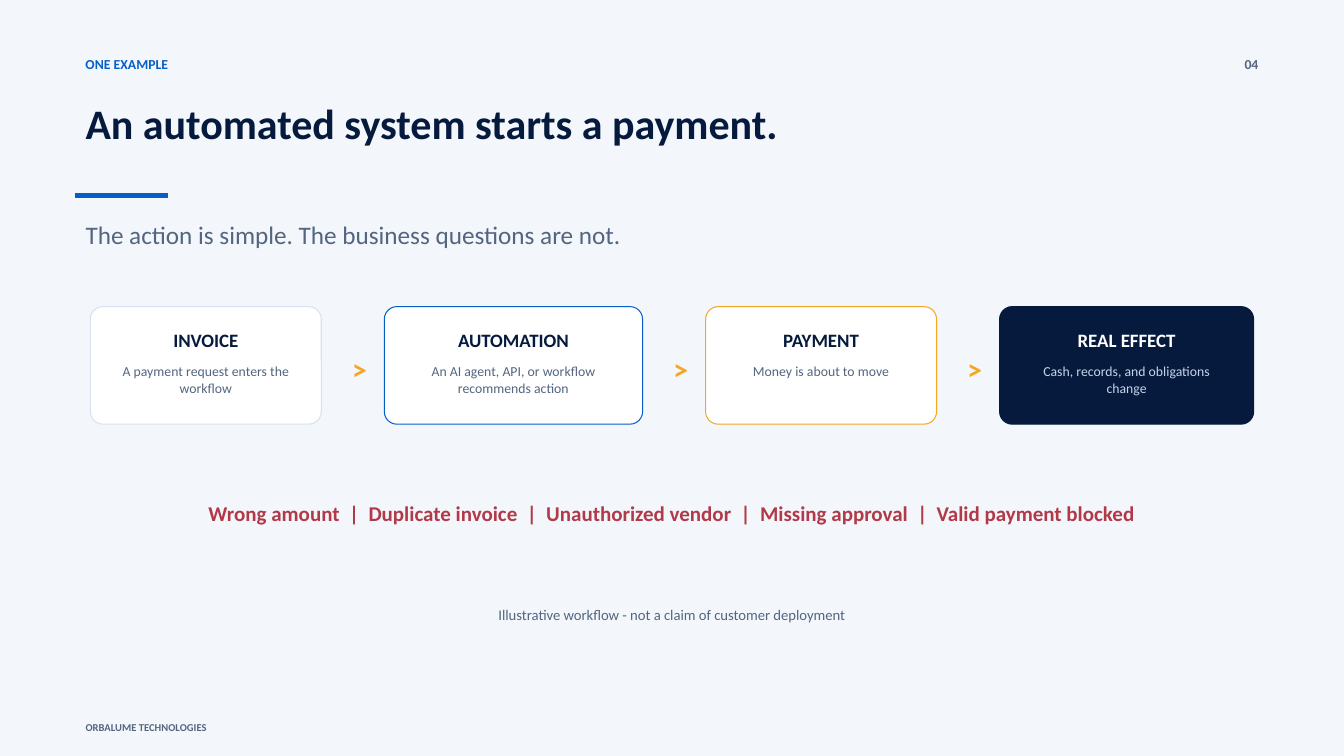
from dataclasses import dataclass
from pptx import Presentation
from pptx.dml.color import RGBColor
from pptx.enum.shapes import MSO_SHAPE
from pptx.enum.text import MSO_ANCHOR, PP_ALIGN
from pptx.util import Inches, Pt

COLS, ROWS = 160, 90  # grid of square units over the whole slide
UNIT = 1 / 12         # inches per unit


@dataclass(frozen=True)
class Theme:
    font: str = "Calibri"
    page: str = "F3F7FC"
    white: str = "FFFFFF"
    navy: str = "061A3D"
    blue: str = "075EC7"
    amber: str = "F5A623"
    red: str = "B23A48"
    slate: str = "53657F"
    border: str = "D7E1EF"
    pale: str = "C6D4EB"
    title: float = 30
    arrow: float = 21
    lead: float = 18
    risks: float = 15
    card: float = 13.5
    note: float = 10.5
    small: float = 9.8
    footer: float = 7.5


T = Theme()


def grid(*units):
    return [Inches(u * UNIT) for u in units]


def add_text(s, box, text, size, color, bold=False, align=PP_ALIGN.LEFT):
    tf = s.shapes.add_textbox(*grid(*box)).text_frame
    tf.word_wrap = True
    tf.vertical_anchor = MSO_ANCHOR.TOP
    p = tf.paragraphs[0]
    p.alignment = align
    r = p.add_run()
    r.text = text
    for name, value in {"name": T.font, "size": Pt(size), "bold": bold}.items():
        setattr(r.font, name, value)
    r.font.color.rgb = RGBColor.from_string(color)


def add_box(s, kind, box, fill, line, width):
    sp = s.shapes.add_shape(kind, *grid(*box))
    sp.shadow.inherit = False
    sp.fill.solid()
    sp.fill.fore_color.rgb = RGBColor.from_string(fill)
    sp.line.color.rgb = RGBColor.from_string(line)
    sp.line.width = Pt(width)
    return sp


def add_header(s, box):
    x, y, w, h = box
    add_text(s, (x, y, 95, 3), "ONE EXAMPLE", T.small, T.blue, True)
    add_text(s, (x + w - 6, y, 6, 3), "04", T.small, T.slate, True, PP_ALIGN.RIGHT)
    add_text(s, (x, y + 5, w, 11.5), "An automated system starts a payment.",
             T.title, T.navy, True)
    add_box(s, MSO_SHAPE.RECTANGLE, (x, y + 17, 11, 0.5), T.blue, T.blue, 0)
    add_text(s, (x, y + h - 5, 112.5, 5),
             "The action is simple. The business questions are not.", T.lead, T.slate)


def add_card(s, box, title, body, fill, line, title_color, body_color):
    x, y, w, h = box
    pad = 2
    sp = add_box(s, MSO_SHAPE.ROUNDED_RECTANGLE, box, fill, line, 0.75)
    sp.adjustments[0] = 1.5 / h
    add_text(s, (x + pad, y + pad, w - 2 * pad, 3.75), title,
             T.card, title_color, True, PP_ALIGN.CENTER)
    add_text(s, (x + pad, y + 6.1, w - 2 * pad, 6.75), body,
             T.small, body_color, align=PP_ALIGN.CENTER)


def add_flow(s, box, steps):
    x, y, w, h = box
    gap = (w - sum(step[0] for step in steps)) / (len(steps) - 1)
    for i, (width, *card) in enumerate(steps):
        if i:
            # Arrow in the gap before this card
            add_text(s, (x - gap + 2.5, y + 4.75, 3.75, 4.75), ">",
                     T.arrow, T.amber, True, PP_ALIGN.CENTER)
        add_card(s, (x, y, width, h), *card)
        x += width + gap


def add_closing(s, box, risks, note):
    x, y, w, h = box
    add_text(s, (x, y, w, 7.5), "  |  ".join(risks), T.risks, T.red, True,
             PP_ALIGN.CENTER)
    add_text(s, (x, y + h - 3.5, w, 3.5), note, T.note, T.slate,
             align=PP_ALIGN.CENTER)


def add_footer(s, box):
    add_text(s, box, "ORBALUME TECHNOLOGIES", T.footer, T.slate, True)


def main():
    prs = Presentation()
    prs.slide_width, prs.slide_height = grid(COLS, ROWS)
    s = prs.slides.add_slide(prs.slide_layouts[6])
    s.background.fill.solid()
    s.background.fill.fore_color.rgb = RGBColor.from_string(T.page)

    steps = [
        (27.5, "INVOICE", "A payment request enters the workflow",
         T.white, T.border, T.navy, T.slate),
        (30.75, "AUTOMATION", "An AI agent, API, or workflow recommends action",
         T.white, T.blue, T.navy, T.slate),
        (27.5, "PAYMENT", "Money is about to move",
         T.white, T.amber, T.navy, T.slate),
        (30.25, "REAL EFFECT", "Cash, records, and obligations change",
         T.navy, T.navy, T.white, T.pale),
    ]
    risks = ["Wrong amount", "Duplicate invoice", "Unauthorized vendor",
             "Missing approval", "Valid payment blocked"]

    add_header(s, (9, 6, COLS - 18, 24.5))
    add_flow(s, (10.75, 36.5, COLS - 21.5, 14), steps)
    add_closing(s, (11, 59, COLS - 22, 16), risks,
                "Illustrative workflow - not a claim of customer deployment")
    add_footer(s, (9, 85.25, 52.5, 2.25))
    prs.save("out.pptx")


if __name__ == "__main__":
    main()
